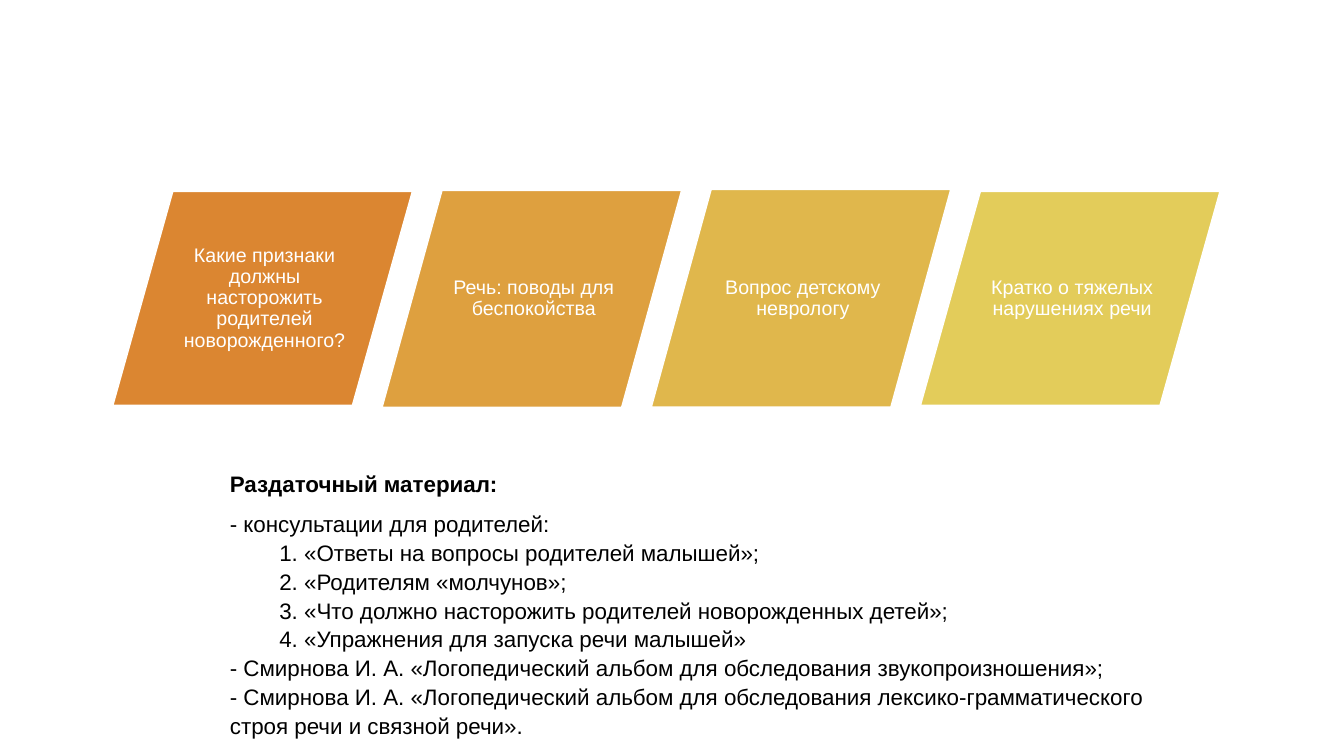
"""Build a slide with four speech topics and a list of handouts."""
from lxml import etree
from pptx import Presentation
from pptx.dml.color import RGBColor
from pptx.enum.shapes import MSO_SHAPE
from pptx.enum.text import MSO_ANCHOR, MSO_AUTO_SIZE, PP_ALIGN
from pptx.oxml.ns import qn
from pptx.util import Inches, Pt

SLANT = MSO_SHAPE.FLOWCHART_DATA
TOP, MIDDLE = MSO_ANCHOR.TOP, MSO_ANCHOR.MIDDLE
LEFT, CENTER = PP_ALIGN.LEFT, PP_ALIGN.CENTER
FIXED = MSO_AUTO_SIZE.NONE


def color(code):
    """Turn a hex string into a colour."""
    return RGBColor.from_string(code)


def style(item, looks):
    """Set each attribute in a dict of format values."""
    for name, value in looks.items():
        setattr(item, name, value)


deck = Presentation()
style(deck, {"slide_width": Inches(13.33), "slide_height": Inches(7.5)})
slide = deck.slides.add_slide(deck.slide_layouts[1])
title = slide.shapes.title.element
title.getparent().remove(title)

topics = [
    ("Какие признаки должны насторожить родителей новорожденного?", "DB8631", 1.9, 2.12),
    ("Речь: поводы для беспокойства", "DEA03F", 1.89, 2.15),
    ("Вопрос детскому неврологу", "E0B74C", 1.88, 2.16),
    ("Кратко о тяжелых нарушениях речи", "E3CC5A", 1.9, 2.12),
]
inset = Inches(0.02)
frame_look = {
    "word_wrap": True, "vertical_anchor": MIDDLE, "margin_left": Inches(0.06),
    "margin_top": inset, "margin_right": inset, "margin_bottom": inset,
}
for i, (text, fill, top, height) in enumerate(topics):
    card = slide.shapes.add_shape(
        SLANT, Inches(1.12 + 2.67 * i), Inches(top), Inches(2.97), Inches(height))
    card.shadow.inherit = False
    card.fill.solid()
    card.fill.fore_color.rgb = color(fill)
    card.line.color.rgb = color("FFFFFF")
    card.line.width = Pt(1)
    style(card.text_frame, frame_look)
    para = card.text_frame.paragraphs[0]
    para.text = text
    style(para, {"alignment": CENTER, "line_spacing": 0.9})
    style(para.font, {"name": "Arial", "size": Pt(14)})
    para.font.color.rgb = color("FFFFFF")

lines = [
    ("Раздаточный материал:", 0),
    ("- консультации для родителей:", 0),
    ("1. «Ответы на вопросы родителей малышей»;", 0.49),
    ("2. «Родителям «молчунов»;", 0.49),
    ("3. «Что должно насторожить родителей новорожденных детей»;", 0.49),
    ("4. «Упражнения для запуска речи малышей»", 0.49),
    ("- Смирнова И. А. «Логопедический альбом для обследования звукопроизношения»;", 0),
    ("- Смирнова И. А. «Логопедический альбом для обследования "
     "лексико-грамматического строя речи и связной речи».", 0),
]
body = slide.placeholders[1]
style(body, {"left": Inches(2.18), "top": Inches(4.6),
             "width": Inches(9.32), "height": Inches(2.8)})
frame = body.text_frame
style(frame, {"word_wrap": True, "auto_size": FIXED, "vertical_anchor": TOP})
frame.text = "\n".join(text for text, indent in lines)
for i, (para, (text, indent)) in enumerate(zip(frame.paragraphs, lines)):
    props = para._p.get_or_add_pPr()
    props.set("marL", "0")
    props.set("indent", str(Inches(indent)))
    etree.SubElement(props, qn("a:buNone"))
    style(para, {"alignment": LEFT, "line_spacing": 1.07, "space_before": Pt(0),
                 "space_after": Pt(0 if i else 8)})
    style(para.font, {"name": "Arial", "size": Pt(16), "bold": i == 0})
    para.font.color.rgb = color("000000")

deck.save("out.pptx")
